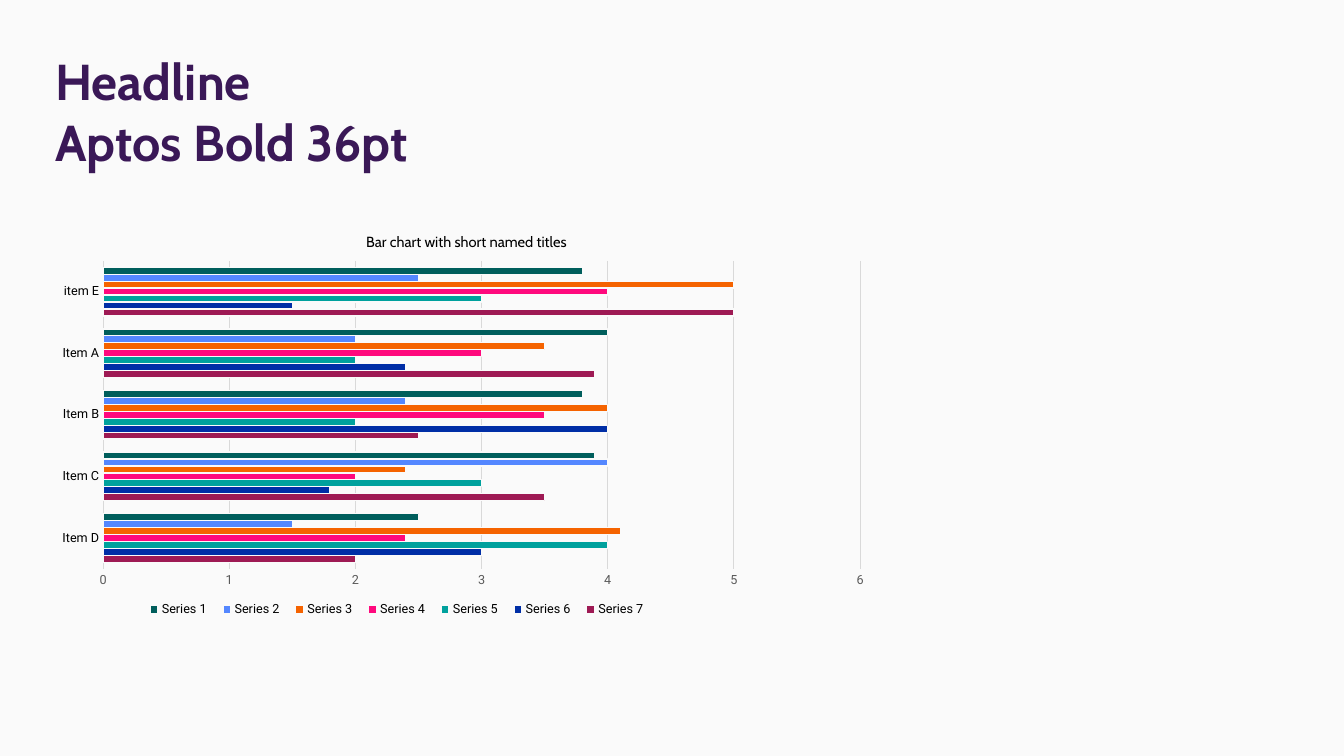
import pptx
import pptx.chart.data
import pptx.dml.color
import pptx.enum.chart
import pptx.enum.text
import pptx.oxml
import pptx.oxml.ns
import pptx.util

Pt = pptx.util.Pt
RGBColor = pptx.dml.color.RGBColor

BACKGROUND = RGBColor(0xFA, 0xFA, 0xFA)
PURPLE = RGBColor(0x3A, 0x18, 0x57)
BLACK = RGBColor(0, 0, 0)
GREY = RGBColor(0x59, 0x59, 0x59)
GRID = RGBColor(0xD9, 0xD9, 0xD9)
HEAD_FONT = "Cabin"
BODY_FONT = "Roboto"

CATEGORIES = ["Item D", "Item C", "Item B", "Item A", "item E"]
SERIES = [
    ("Series 7", [2, 3.5, 2.5, 3.9, 5], RGBColor(0x9E, 0x1A, 0x54)),
    ("Series 6", [3, 1.8, 4, 2.4, 1.5], RGBColor(0x00, 0x2E, 0xA6)),
    ("Series 5", [4, 3, 2, 2, 3], RGBColor(0x00, 0xA1, 0x9D)),
    ("Series 4", [2.4, 2, 3.5, 3, 4], RGBColor(0xFF, 0x09, 0x7D)),
    ("Series 3", [4.1, 2.4, 4, 3.5, 5], RGBColor(0xF5, 0x63, 0x00)),
    ("Series 2", [1.5, 4, 2.4, 2, 2.5], RGBColor(0x54, 0x87, 0xFF)),
    ("Series 1", [2.5, 3.9, 3.8, 4, 3.8], RGBColor(0x00, 0x5E, 0x5C)),
]


def set_font(font, name, size, color, bold=False):
    font.name = name
    font.size = Pt(size)
    font.bold = bold
    font.color.rgb = color


def set_line(line, color, width):
    line.color.rgb = color
    line.width = Pt(width)


def set_layout(element, followers, target=None, **fractions):
    """Place a chart part by fractions of the chart's width and height."""
    for old in element.findall(pptx.oxml.ns.qn("c:layout")):
        element.remove(old)
    parts = f'<c:layoutTarget val="{target}"/>' if target else ""
    parts += "".join(f'<c:{k}Mode val="edge"/>' for k in ("x", "y"))
    parts += "".join(f'<c:{k} val="{v}"/>' for k, v in fractions.items())
    layout = pptx.oxml.parse_xml(
        f'<c:layout {pptx.oxml.ns.nsdecls("c")}>'
        f"<c:manualLayout>{parts}</c:manualLayout></c:layout>")
    element.insert_element_before(layout, *followers)


def add_headline(s, lines):
    sp = s.shapes.add_textbox(Pt(32.4), Pt(32.4), Pt(597), Pt(79))
    tf = sp.text_frame
    tf.word_wrap = True
    tf.vertical_anchor = pptx.enum.text.MSO_ANCHOR.TOP
    p = tf.paragraphs[0]
    for i, line in enumerate(lines):
        if i:
            p.add_line_break()
        r = p.add_run()
        r.text = line
        set_font(r.font, HEAD_FONT, 36, PURPLE, bold=True)


def add_bar_chart(s, title):
    data = pptx.chart.data.CategoryChartData()
    data.categories = CATEGORIES
    for name, values, _ in SERIES:
        data.add_series(name, values)
    chart = s.shapes.add_chart(
        pptx.enum.chart.XL_CHART_TYPE.BAR_CLUSTERED,
        Pt(33.1), Pt(151.2), Pt(596.2), Pt(295.9), data).chart
    set_font(chart.font, BODY_FONT, 9, BLACK)

    # Title
    chart.has_title = True
    r = chart.chart_title.text_frame.paragraphs[0].add_run()
    r.text = title
    set_font(r.font, HEAD_FONT, 10.5, BLACK)
    chart.chart_title.include_in_layout = False
    set_layout(chart.chart_title._element,
               ("c:overlay", "c:spPr", "c:txPr"), x=0.38, y=0.04)

    # Bars
    plot = chart.plots[0]
    plot.gap_width = 182
    plot.overlap = 0
    plot.vary_by_categories = False
    for series, (_, _, color) in zip(plot.series, SERIES):
        series.format.fill.solid()
        series.format.fill.fore_color.rgb = color
        set_line(series.format.line, BACKGROUND, 1)
    plot_area = chart._chartSpace.chart.plotArea
    set_layout(plot_area, ("c:barChart",), "inner",
               x=0.068, y=0.119, w=0.907, h=0.743)

    # Axes
    no_tick = pptx.enum.chart.XL_TICK_MARK.NONE
    for axis, color in ((chart.category_axis, BLACK), (chart.value_axis, GREY)):
        axis.major_tick_mark = axis.minor_tick_mark = no_tick
        set_font(axis.tick_labels.font, BODY_FONT, 9, color)
    set_line(chart.category_axis.format.line, GRID, 0.75)
    value_axis = chart.value_axis
    value_axis.minimum_scale = 0
    value_axis.maximum_scale = 6
    value_axis.major_unit = 1
    value_axis.format.line.fill.background()
    value_axis.has_major_gridlines = True
    set_line(value_axis.major_gridlines.format.line, GRID, 0.75)

    # Legend
    chart.has_legend = True
    legend = chart.legend
    legend.position = pptx.enum.chart.XL_LEGEND_POSITION.BOTTOM
    legend.include_in_layout = False
    set_font(legend.font, BODY_FONT, 9, BLACK)
    set_layout(legend._element, ("c:overlay", "c:spPr", "c:txPr"),
               x=0.11, y=0.93, w=0.62, h=0.06)


def main():
    prs = pptx.Presentation()
    prs.slide_width = Pt(960)
    prs.slide_height = Pt(540)
    s = prs.slides.add_slide(prs.slide_layouts[6])
    s.background.fill.solid()
    s.background.fill.fore_color.rgb = BACKGROUND
    add_headline(s, ["Headline", "Aptos Bold 36pt"])
    add_bar_chart(s, "Bar chart with short named titles")
    prs.save("out.pptx")


if __name__ == "__main__":
    main()
